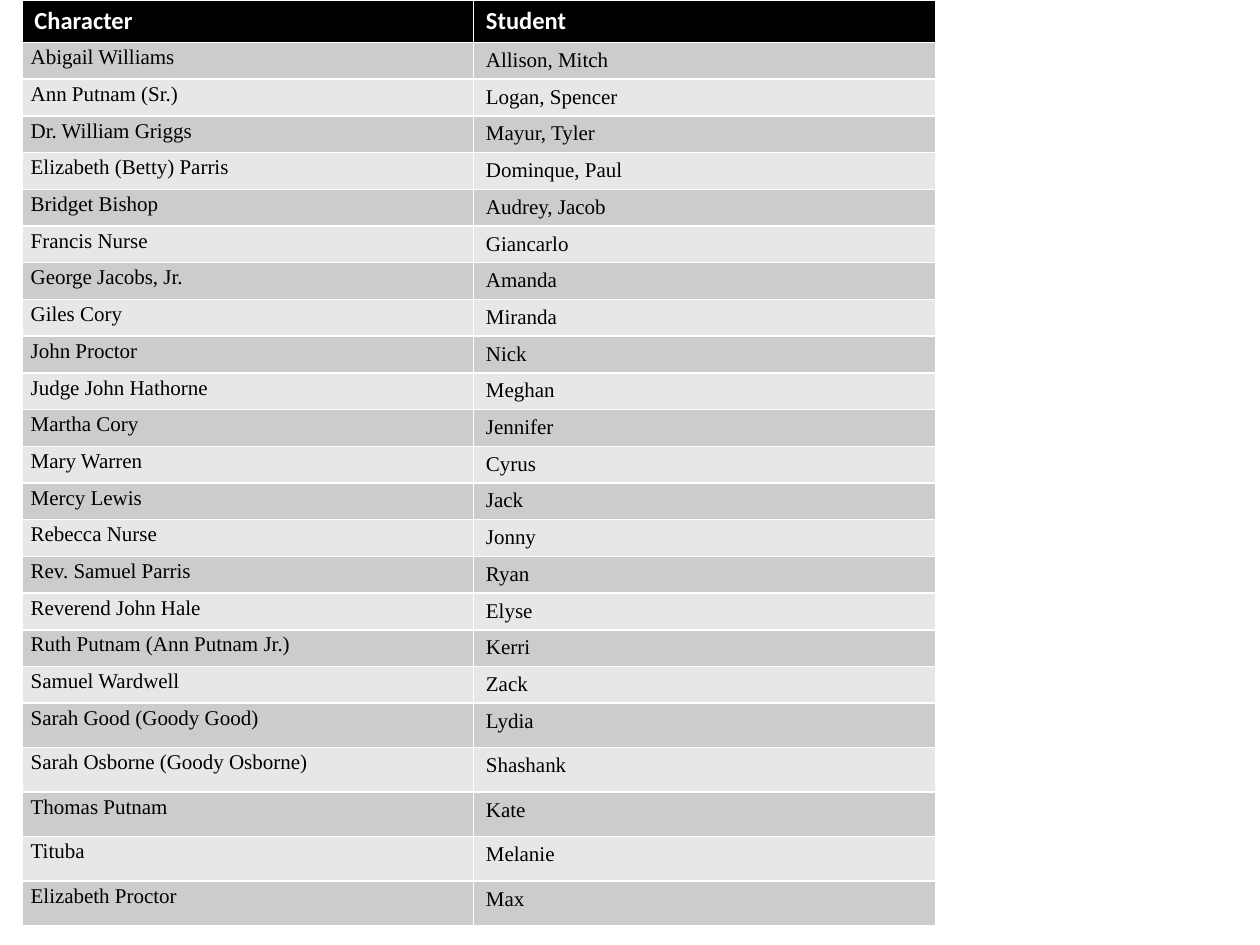
from pptx import Presentation
from pptx.dml.color import RGBColor as RGB
from pptx.util import Inches, Pt

BLACK = RGB(0x00, 0x00, 0x00)
WHITE = RGB(0xFF, 0xFF, 0xFF)
DARK_BAND = RGB(0xCC, 0xCC, 0xCC)
LIGHT_BAND = RGB(0xE7, 0xE7, 0xE7)

HEADER = ("Character", "Student")
CAST = [
    ("Abigail Williams", "Allison, Mitch"),
    ("Ann Putnam (Sr.)", "Logan, Spencer"),
    ("Dr. William Griggs", "Mayur, Tyler"),
    ("Elizabeth (Betty) Parris", "Dominque, Paul"),
    ("Bridget Bishop", "Audrey, Jacob"),
    ("Francis Nurse", "Giancarlo"),
    ("George Jacobs, Jr.", "Amanda"),
    ("Giles Cory", "Miranda"),
    ("John Proctor", "Nick"),
    ("Judge John Hathorne", "Meghan"),
    ("Martha Cory", "Jennifer"),
    ("Mary Warren", "Cyrus"),
    ("Mercy Lewis", "Jack"),
    ("Rebecca Nurse", "Jonny"),
    ("Rev. Samuel Parris", "Ryan"),
    ("Reverend John Hale", "Elyse"),
    ("Ruth Putnam (Ann Putnam Jr.)", "Kerri"),
    ("Samuel Wardwell", "Zack"),
    ("Sarah Good (Goody Good)", "Lydia"),
    ("Sarah Osborne (Goody Osborne)", "Shashank"),
    ("Thomas Putnam", "Kate"),
    ("Tituba", "Melanie"),
    ("Elizabeth Proctor", "Max"),
]


class Deck:
    """Style and current slide, on a grid of 720 columns by 540 rows."""

    head_font, head_size = "Calibri", Pt(14)
    body_font, body_size = "Times New Roman", Pt(12)
    columns, rows = 720, 540

    def __init__(self, prs):
        self.col = prs.slide_width / self.columns
        self.row = prs.slide_height / self.rows
        self.slide = prs.slides.add_slide(prs.slide_layouts[6])

    def x(self, n):
        return round(n * self.col)

    def y(self, n):
        return round(n * self.row)

    def cell(self, cell, text, fill, header=False):
        cell.fill.solid()
        cell.fill.fore_color.rgb = fill
        cell.text_frame.text = text
        font = cell.text_frame.paragraphs[0].runs[0].font
        font.name = self.head_font if header else self.body_font
        font.size = self.head_size if header else self.body_size
        font.bold = header
        font.color.rgb = WHITE if header else BLACK

    def table(self, left, top, widths, heights, header, records):
        frame = self.slide.shapes.add_table(
            len(heights), len(widths), self.x(left), self.y(top),
            self.x(sum(widths)), self.y(sum(heights)))
        table = frame.table
        for column, width in zip(table.columns, widths):
            column.width = self.x(width)
        for row, height in zip(table.rows, heights):
            row.height = self.y(height)

        # Header row
        for c, text in enumerate(header):
            self.cell(table.cell(0, c), text, BLACK, header=True)

        # Banded body rows; the first column is set tighter with looser lines
        for r, record in enumerate(records, start=1):
            fill = DARK_BAND if r % 2 else LIGHT_BAND
            for c, text in enumerate(record):
                self.cell(table.cell(r, c), text, fill)
            first = table.cell(r, 0)
            first.margin_left = first.margin_right = Inches(0.07)
            first.margin_top = first.margin_bottom = 0
            first.text_frame.paragraphs[0].line_spacing = 1.15


def main():
    prs = Presentation()
    prs.slide_width, prs.slide_height = Inches(10), Inches(7.5)
    deck = Deck(prs)

    # Cast list: a header, 18 regular rows and 5 taller ones
    heights = [24] + [21] * 18 + [25.4] * 5
    deck.table(12.5, 0, [258, 264], heights, HEADER, CAST)

    prs.save("out.pptx")


if __name__ == "__main__":
    main()
